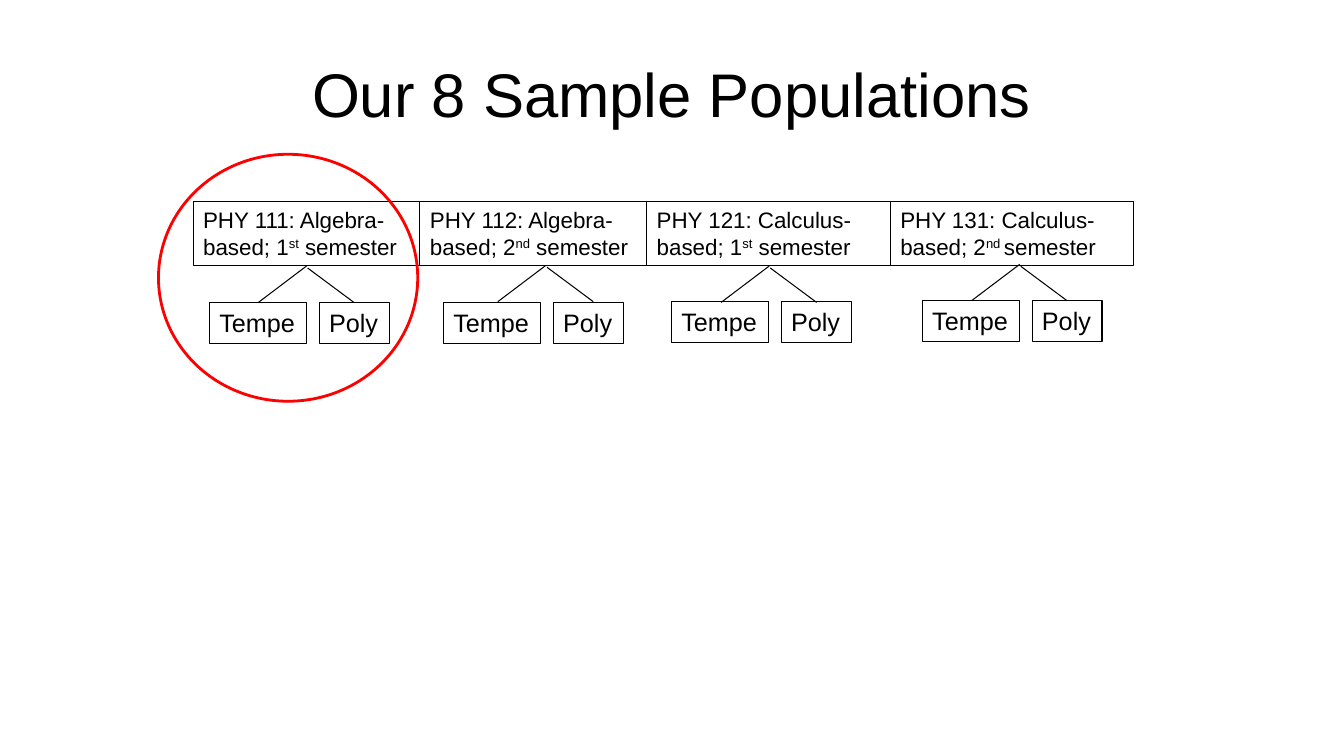
"""Build the slide that shows the eight sample populations by course and campus."""
import pptx
import pptx.dml.color
import pptx.enum.shapes
import pptx.enum.text
import pptx.oxml.ns
import pptx.util
import lxml.etree

Pt = pptx.util.Pt
BLACK = pptx.dml.color.RGBColor(0x00, 0x00, 0x00)
RED = pptx.dml.color.RGBColor(0xFF, 0x00, 0x00)
SHAPES = pptx.enum.shapes.MSO_SHAPE
ANCHOR = pptx.enum.text.MSO_ANCHOR
ALIGN = pptx.enum.text.PP_ALIGN

TITLE_FONT = {"name": "Arial", "size": Pt(44)}
COURSE_FONT = {"name": "Arial", "size": Pt(16)}
CAMPUS_FONT = {"name": "Arial", "size": Pt(18)}
COURSE_FRAME = {"word_wrap": True, "vertical_anchor": ANCHOR.TOP}
CAMPUS_FRAME = {"word_wrap": False, "vertical_anchor": ANCHOR.TOP}
TITLE_FRAME = {
    "word_wrap": True,
    "vertical_anchor": ANCHOR.MIDDLE,
    "auto_size": pptx.enum.text.MSO_AUTO_SIZE.NONE,
}

COURSE_TOP, COURSE_HEIGHT = 143.8, 46
CAMPUS_HEIGHT = 29.2
CAMPUSES = (("Tempe", 0, 69.5), ("Poly", 78.4, 50))
BRANCHES = ((0, 0, -34.4, 26), (0.7, 1.4, 33.8, 26))
COURSES = (
    {"left": 138, "width": 162, "campus": (149.6, 216), "apex": (219, 190),
     "label": ("PHY 111: Algebra-based; 1", "st", " semester")},
    {"left": 300, "width": 162, "campus": (316.8, 216), "apex": (390, 189.5),
     "label": ("PHY 112: Algebra-based; 2", "nd", " semester")},
    {"left": 462, "width": 174, "campus": (479.6, 215.3), "apex": (549.5, 190),
     "label": ("PHY 121: Calculus-based; 1", "st", " semester")},
    {"left": 636, "width": 174, "campus": (658.8, 214.6), "apex": (728.4, 188.8),
     "label": ("PHY 131: Calculus-based; 2", "nd ", "semester")},
)


def apply_format(target, values):
    """Set every attribute named in values on the target."""
    for name, value in values.items():
        setattr(target, name, value)


def add_span(para, text, font, raised=False):
    """Add black text to a paragraph, as a superscript when raised."""
    span = para.add_run()
    span.text = text
    apply_format(span.font, font)
    span.font.color.rgb = BLACK
    if raised:
        span._r.get_or_add_rPr().set("baseline", "30000")


def add_outline(page, kind, left, top, width, height, color=BLACK, weight=0.75):
    """Add an unfilled preset shape with a thin coloured line."""
    box = page.shapes.add_shape(kind, Pt(left), Pt(top), Pt(width), Pt(height))
    box.shadow.inherit = False
    box.fill.background()
    box.line.color.rgb = color
    box.line.width = Pt(weight)
    return box


def add_label_box(page, left, top, width, height, parts, font, frame):
    """Add an outlined box whose second text part, if any, is raised."""
    box = add_outline(page, SHAPES.RECTANGLE, left, top, width, height)
    apply_format(box.text_frame, frame)
    para = box.text_frame.paragraphs[0]
    para.alignment = ALIGN.LEFT
    for index, text in enumerate(parts):
        add_span(para, text, font, raised=index == 1)


def add_branch(page, start_x, start_y, end_x, end_y):
    """Add a thin black straight line."""
    branch = page.shapes.add_connector(
        pptx.enum.shapes.MSO_CONNECTOR.STRAIGHT,
        Pt(start_x), Pt(start_y), Pt(end_x), Pt(end_y))
    branch.line.color.rgb = BLACK
    branch.line.width = Pt(0.75)
    properties = branch._element.spPr
    lxml.etree.SubElement(properties, pptx.oxml.ns.qn("a:effectLst"))


def add_course(page, course):
    """Add a course box with its two campus boxes and branches."""
    add_label_box(page, course["left"], COURSE_TOP, course["width"],
                  COURSE_HEIGHT, course["label"], COURSE_FONT, COURSE_FRAME)
    left, top = course["campus"]
    for name, offset, width in CAMPUSES:
        add_label_box(page, left + offset, top, width, CAMPUS_HEIGHT,
                      (name,), CAMPUS_FONT, CAMPUS_FRAME)
    x, y = course["apex"]
    for start_x, start_y, end_x, end_y in BRANCHES:
        add_branch(page, x + start_x, y + start_y, x + end_x, y + end_y)


def set_title(page, text):
    """Place and format the title placeholder."""
    title = page.shapes.title
    apply_format(title, {"left": Pt(48), "top": Pt(21.6),
                         "width": Pt(864), "height": Pt(90)})
    apply_format(title.text_frame, TITLE_FRAME)
    para = title.text_frame.paragraphs[0]
    para.alignment = ALIGN.CENTER
    add_span(para, text, TITLE_FONT)


def main():
    """Build and save the deck."""
    deck = pptx.Presentation()
    apply_format(deck, {"slide_width": Pt(960), "slide_height": Pt(540)})
    page = deck.slides.add_slide(deck.slide_layouts.get_by_name("Title Only"))
    set_title(page, "Our 8 Sample Populations")
    for course in COURSES:
        add_course(page, course)
    add_outline(page, SHAPES.OVAL, 113.2, 110.2, 185.2, 176.4, RED, 2)
    deck.save("out.pptx")


if __name__ == "__main__":
    main()
